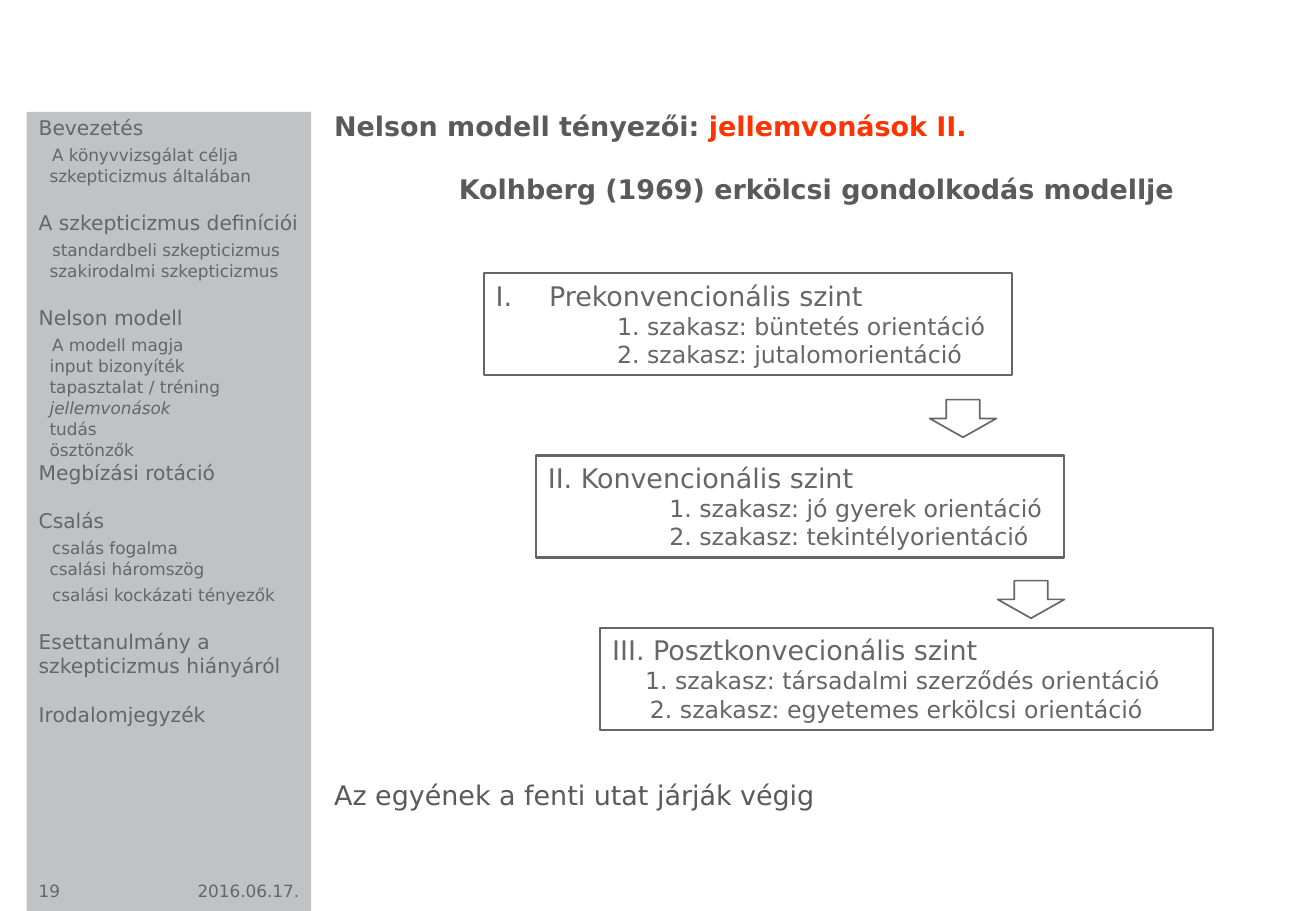
from dataclasses import dataclass

from lxml.etree import SubElement
from pptx import Presentation
from pptx.dml.color import RGBColor
from pptx.enum.shapes import MSO_SHAPE as Preset
from pptx.enum.text import MSO_ANCHOR as Anchor, MSO_AUTO_SIZE as AutoSize, PP_ALIGN as Align
from pptx.oxml.ns import qn
from pptx.util import Inches, Pt


@dataclass(frozen=True)
class Theme:
    """Colours, font and type sizes of the slide."""
    font: str = "DejaVu Sans"
    text: RGBColor = RGBColor(0x66, 0x66, 0x66)
    heading: RGBColor = RGBColor(0x5A, 0x5A, 0x5A)
    accent: RGBColor = RGBColor(0xFF, 0x33, 0x00)
    panel: RGBColor = RGBColor(0xC1, 0xC2, 0xC4)
    large: Pt = Pt(16)
    stage: Pt = Pt(14)
    section: Pt = Pt(12)
    small: Pt = Pt(10)


THEME = Theme()

AGENDA_STYLES = {
    "first": (THEME.section, 0, 0),
    "section": (THEME.section, 0, 14.5),
    "close": (THEME.section, 0, 0),
    "lead": (THEME.small, 0.11, 3),
    "item": (THEME.small, 0.09, 0.4),
}

AGENDA = [
    ("first", "Bevezetés"),
    ("lead", "A könyvvizsgálat célja"),
    ("item", "szkepticizmus általában"),
    ("section", "A szkepticizmus definíciói"),
    ("lead", "standardbeli szkepticizmus"),
    ("item", "szakirodalmi szkepticizmus"),
    ("section", "Nelson modell"),
    ("lead", "A modell magja"),
    ("item", "input bizonyíték"),
    ("item", "tapasztalat / tréning"),
    ("item", "jellemvonások"),
    ("item", "tudás"),
    ("item", "ösztönzők"),
    ("close", "Megbízási rotáció"),
    ("section", "Csalás"),
    ("lead", "csalás fogalma"),
    ("item", "csalási háromszög"),
    ("lead", "csalási kockázati tényezők"),
    ("section", "Esettanulmány a szkepticizmus hiányáról"),
    ("section", "Irodalomjegyzék"),
]
CURRENT_TOPIC = "jellemvonások"

LEVELS = [
    ((3.98, 2.25, 4.35), "Prekonvencionális szint", True,
     [(1, "1. szakasz: büntetés orientáció"), (1, "2. szakasz: jutalomorientáció")]),
    ((4.41, 3.75, 4.35), "II. Konvencionális szint", False,
     [(1, "1. szakasz: jó gyerek orientáció"), (1, "2. szakasz: tekintélyorientáció")]),
    ((4.94, 5.17, 5.04), "III. Posztkonvecionális szint", False,
     [(0.27, "1. szakasz: társadalmi szerződés orientáció"),
      (0.31, "2. szakasz: egyetemes erkölcsi orientáció")]),
]
LEVEL_HEIGHT = 0.84
ARROWS = [(7.65, 3.29), (8.21, 4.78)]


def apply(target, values):
    """Set every attribute named in a dict of format values."""
    for name, value in values.items():
        setattr(target, name, value)


def prepare_frame(shape, margins=(0.1, 0.05, 0.1, 0.05), anchor=Anchor.TOP):
    """Give a shape a wrapped text frame with fixed margins."""
    frame = shape.text_frame
    sides = ("margin_left", "margin_top", "margin_right", "margin_bottom")
    apply(frame, {"word_wrap": True, "auto_size": AutoSize.NONE, "vertical_anchor": anchor,
                  **dict(zip(sides, map(Inches, margins)))})
    return frame


def write(frame, runs, indent=0, hanging=0, numbering=None, before=0, align=Align.LEFT):
    """Append a paragraph made of (text, font values) runs."""
    fresh = not frame.paragraphs[0].runs
    paragraph = frame.paragraphs[0] if fresh else frame.add_paragraph()
    properties = paragraph._p.get_or_add_pPr()
    properties.set("marL", str(Inches(indent)))
    properties.set("indent", str(Inches(-hanging)))
    if numbering:
        SubElement(properties, qn("a:buFont")).set("typeface", THEME.font)
        SubElement(properties, qn("a:buAutoNum")).set("type", numbering)
    else:
        SubElement(properties, qn("a:buNone"))
    apply(paragraph, {"alignment": align, "space_before": Pt(before)})
    for text, values in runs:
        run = paragraph.add_run()
        run.text = text
        color = values.get("color", THEME.text)
        apply(run.font, {"name": THEME.font,
                         **{key: value for key, value in values.items() if key != "color"}})
        run.font.color.rgb = color


def place(shape, box):
    """Move a shape to a box given in inches."""
    apply(shape, dict(zip(("left", "top", "width", "height"), map(Inches, box))))


def add_outlined(slide, preset, box, weight):
    """Add an unfilled preset shape with a grey outline."""
    shape = slide.shapes.add_shape(preset, *map(Inches, box))
    shape.shadow.inherit = False
    shape.fill.background()
    shape.line.color.rgb = THEME.text
    shape.line.width = Pt(weight)
    return shape


def add_sidebar(slide, box):
    """Draw the grey agenda panel with page number and date."""
    left, top, width, height = box
    panel = slide.shapes.add_shape(Preset.RECTANGLE, *map(Inches, box))
    panel.shadow.inherit = False
    panel.fill.solid()
    panel.fill.fore_color.rgb = THEME.panel
    panel.line.fill.background()

    agenda = slide.shapes.add_textbox(*map(Inches, (left, top - 0.02, width + 0.07, height - 0.27)))
    frame = prepare_frame(agenda, (0.1, 0.05, 0.1, 0.01))
    for style, topic in AGENDA:
        size, indent, before = AGENDA_STYLES[style]
        write(frame, [(topic, {"size": size, "italic": topic == CURRENT_TOPIC})],
              indent=indent, before=before)

    footer_top = top + height - 0.3
    for text, offset, span, align in (("19", 0, 0.79, Align.LEFT),
                                      ("2016.06.17.", width - 1.17, 1.17, Align.RIGHT)):
        footer = slide.shapes.add_textbox(*map(Inches, (left + offset, footer_top, span, 0.27)))
        write(prepare_frame(footer), [(text, {"size": THEME.small})], align=align)


def fill_title(slide, box):
    """Write the two-coloured slide title."""
    title = slide.shapes.title
    place(title, box)
    bold = {"size": THEME.large, "bold": True}
    write(prepare_frame(title, (0, 0, 0, 0)),
          [("Nelson modell tényezői: ", {**bold, "color": THEME.heading}),
           ("jellemvonások II.", {**bold, "color": THEME.accent})])


def fill_body(slide, box):
    """Write the model heading and the closing remark around the diagram."""
    body = slide.placeholders[1]
    place(body, box)
    frame = prepare_frame(body, (0, 0, 0, 0))
    plain = {"size": THEME.large, "color": THEME.heading}
    write(frame, [("Kolhberg (1969) erkölcsi gondolkodás modellje", {**plain, "bold": True})],
          indent=0.08, align=Align.CENTER)
    write(frame, [("Az egyének a fenti utat járják végig", plain)], before=340)


def add_levels(slide):
    """Draw the stepped level boxes and the arrows between them."""
    for (left, top, width), heading, numbered, stages in LEVELS:
        level = add_outlined(slide, Preset.RECTANGLE, (left, top, width, LEVEL_HEIGHT), 1.25)
        frame = prepare_frame(level)
        hang = 0.44 if numbered else 0
        write(frame, [(heading, {"size": THEME.large})], indent=hang, hanging=hang,
              numbering="romanUcPeriod" if numbered else None)
        for indent, stage in stages:
            write(frame, [(stage, {"size": THEME.stage})], indent=indent)
    for left, top in ARROWS:
        add_outlined(slide, Preset.DOWN_ARROW, (left, top, 0.55, 0.31), 1)


def main():
    """Build the slide and save the presentation."""
    deck = Presentation()
    apply(deck, {"slide_width": Inches(10.83), "slide_height": Inches(7.5)})
    slide = deck.slides.add_slide(deck.slide_layouts[1])
    add_sidebar(slide, (0.22, 0.92, 2.34, 6.58))
    fill_title(slide, (2.75, 0.9, 7.86, 0.27))
    fill_body(slide, (2.75, 1.42, 7.86, 5.3))
    add_levels(slide)
    deck.save("out.pptx")


if __name__ == "__main__":
    main()
